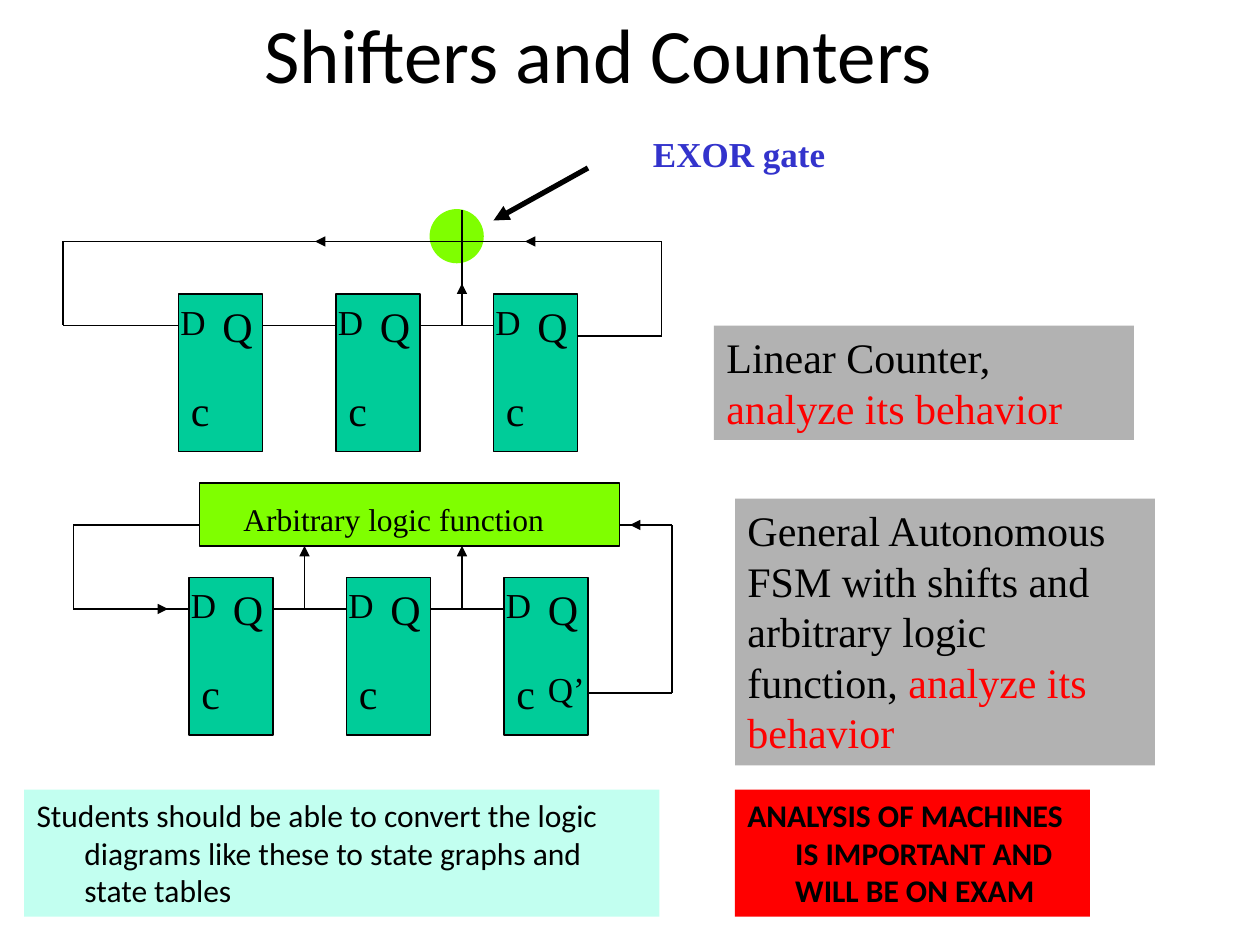
from lxml.etree import SubElement
from pptx import Presentation
from pptx.dml.color import RGBColor
from pptx.enum.shapes import MSO_CONNECTOR, MSO_SHAPE
from pptx.enum.text import MSO_ANCHOR as Anchor, PP_ALIGN as Align
from pptx.oxml.ns import qn
from pptx.util import Inches, Pt

COLORS = {
    "black": "000000", "red": "FF0000", "blue": "3333CC", "teal": "00CC99",
    "lime": "7FFF00", "gray": "B2B2B2", "mint": "C2FFF0",
}
RGB = {name: RGBColor.from_string(value) for name, value in COLORS.items()}
SERIF, SANS = "Times New Roman", "Calibri"

deck = Presentation()
deck.slide_width, deck.slide_height = Inches(10), Inches(7.5)
page = deck.slides.add_slide(deck.slide_layouts[6])
CELL = deck.slide_width / 120  # the grid has 120 columns and 90 rows


def add_box(area, runs=(), size=24, font=SERIF, bold=False, fill=None,
            line=None, kind=MSO_SHAPE.RECTANGLE, hanging=0):
    """Add a box at (column, row, columns, rows); runs are (text, color) pairs."""
    place = [round(value * CELL) for value in area]
    if fill:
        box = page.shapes.add_shape(kind, *place)
        box.shadow.inherit = False
        box.fill.solid()
        box.fill.fore_color.rgb = RGB[fill]
        if line:
            box.line.color.rgb = RGB[line]
            box.line.width = Pt(1)
        else:
            box.line.fill.background()
    else:
        box = page.shapes.add_textbox(*place)
    frame = box.text_frame
    frame.word_wrap = True
    frame.vertical_anchor = Anchor.TOP
    para = frame.paragraphs[0]
    para.alignment = Align.LEFT
    if hanging:
        props = para._p.get_or_add_pPr()
        props.set("marL", str(Inches(hanging)))
        props.set("indent", str(-Inches(hanging)))
    for text, color in runs:
        span = para.add_run()
        span.text = text
        span.font.name, span.font.size, span.font.bold = font, Pt(size), bold
        span.font.color.rgb = RGB[color]
    return box


def add_wire(ends, width=1, arrow=False):
    """Draw a line between grid points (column, row, column, row)."""
    wire = page.shapes.add_connector(
        MSO_CONNECTOR.STRAIGHT, *[round(value * CELL) for value in ends])
    wire.line.color.rgb = RGB["black"]
    wire.line.width = Pt(width)
    if arrow:
        SubElement(wire.line._get_or_add_ln(), qn("a:tailEnd"), type="triangle")
    SubElement(wire._element.spPr, qn("a:effectLst"))


title = add_box((6, 0, 102, 10), [("Shifters and Counters", "black")], 44, SANS)
title.text_frame.vertical_anchor = Anchor.MIDDLE
title.text_frame.paragraphs[0].alignment = Align.CENTER

# Two rows of three flip-flops
for first, top in ((17, 28), (18, 55)):
    for left in range(first, first + 45, 15):
        add_box((left, top, 8, 15), fill="teal", line="black")
        add_box((left - 1, top, 4, 5.2), [("D", "black")], 20)
        add_box((left + 3, top, 6, 6), [("Q", "black")])
        add_box((left, top + 8, 6, 6), [("c", "black")])
add_box((51, 63, 6, 5.2), [("Q’", "black")], 20)

counter_wires = [
    (25, 31, 32, 31), (40, 31, 47, 31), (55, 32, 63, 32), (63, 32, 63, 23),
    (63, 23, 6, 23), (6, 23, 6, 31), (6, 31, 17, 31),
]
machine_wires = [
    (26, 58, 33, 58), (41, 58, 48, 58), (56, 66, 64, 66), (64, 57, 64, 66),
    (64, 59, 64, 50), (64, 50, 7, 50), (7, 50, 7, 58), (7, 58, 18, 58),
]
for ends in counter_wires + machine_wires:
    add_wire(ends)

# EXOR gate and logic function, on top of the feedback wires
add_box((41, 20, 5, 5), fill="lime", line="lime", kind=MSO_SHAPE.OVAL)
for ends in ((44, 31, 44, 20), (40, 23, 47, 23)):
    add_wire(ends)
add_wire((56, 16, 47, 21), width=3, arrow=True)
add_box((61, 12, 26, 5.2), [("EXOR gate", "blue")], 20, bold=True)
add_box((19, 46, 40, 6), fill="lime", line="black")
add_box((22, 47, 36, 4.8), [("Arbitrary logic function", "black")], 18)

signal_arrows = [
    (36, 23, 30, 23), (44, 30, 44, 27), (55, 23, 50, 23), (44, 58, 44, 52),
    (29, 58, 29, 52), (63, 50, 60, 50), (10, 58, 16, 58),
]
for ends in signal_arrows:
    add_wire(ends, arrow=True)

# Notes beside and below the circuits
task = ("analyze its behavior", "red")
add_box((68, 31, 40, 10.9), [("Linear Counter, ", "black"), task], fill="gray")
add_box((70, 47.5, 40, 25.4),
        [("General Autonomous FSM with shifts and arbitrary logic function, ",
          "black"), task], fill="gray")
add_box((2.3, 75.2, 60.5, 12.1),
        [("Students should be able to convert the logic diagrams like these "
          "to state graphs and state tables", "black")],
        18, SANS, fill="mint", hanging=0.38)
add_box((70, 75.2, 33.8, 12.1),
        [("ANALYSIS OF MACHINES IS IMPORTANT AND WILL BE ON EXAM", "black")],
        18, SANS, bold=True, fill="red", hanging=0.38)

deck.save("out.pptx")
